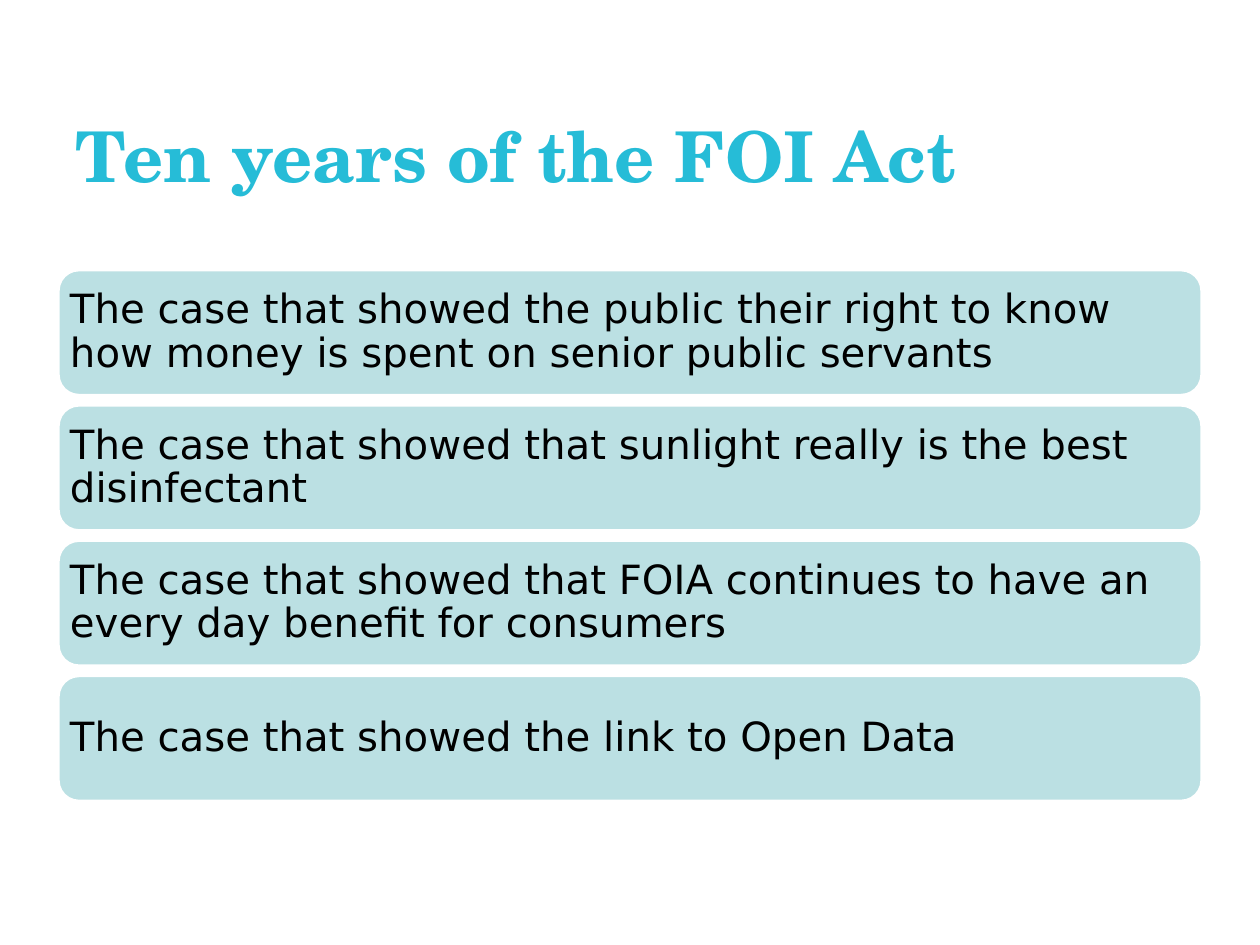
from pptx import Presentation
from pptx.dml.color import RGBColor
from pptx.enum.shapes import MSO_SHAPE as Shape
from pptx.enum.text import MSO_ANCHOR as Anchor, MSO_AUTO_SIZE as AutoSize, PP_ALIGN as Align
from pptx.util import Pt

TITLE_BLUE = RGBColor(0x26, 0xBC, 0xD7)
PANEL_TEAL = RGBColor(0xBB, 0xE0, 0xE3)
WHITE = RGBColor(0xFF, 0xFF, 0xFF)
BLACK = RGBColor(0x00, 0x00, 0x00)

TITLE_FONT = {"name": "TeX Gyre Schola", "size": Pt(40), "bold": True}
CASE_FONT = {"name": "DejaVu Sans", "size": Pt(23), "bold": False}
TITLE_FRAME = {"word_wrap": True, "auto_size": AutoSize.NONE, "vertical_anchor": Anchor.TOP}
CASE_FRAME = {
    "word_wrap": True,
    "vertical_anchor": Anchor.MIDDLE,
    "margin_left": Pt(3.4),
    "margin_right": Pt(3.4),
    "margin_top": Pt(3.4),
    "margin_bottom": Pt(3.4),
}
PARAGRAPH = {"alignment": Align.LEFT, "line_spacing": 0.9}

CASES = [
    "The case that showed the public their right to know how money is spent on senior public servants",
    "The case that showed that sunlight really is the best disinfectant",
    "The case that showed that FOIA continues to have an every day benefit for consumers",
    "The case that showed the link to Open Data",
]
PANEL_LEFT, PANEL_TOP = 33.1, 154.1
PANEL_WIDTH, PANEL_HEIGHT = 653.8, 72
PANEL_PITCH = 77.3


def apply_format(target, values):
    for name, value in values.items():
        setattr(target, name, value)


def write_text(shape, text, frame_format, font_format, color):
    frame = shape.text_frame
    apply_format(frame, frame_format)
    frame.text = text
    paragraph = frame.paragraphs[0]
    apply_format(paragraph, PARAGRAPH)
    apply_format(paragraph.font, font_format)
    paragraph.font.color.rgb = color


def add_title(slide, text):
    title = slide.shapes.title
    apply_format(title, {"left": Pt(36), "top": Pt(66.2), "width": Pt(653.8), "height": Pt(84.2)})
    write_text(title, text, TITLE_FRAME, TITLE_FONT, TITLE_BLUE)


def add_case_panel(slide, top, text):
    panel = slide.shapes.add_shape(
        Shape.ROUNDED_RECTANGLE, Pt(PANEL_LEFT), Pt(top), Pt(PANEL_WIDTH), Pt(PANEL_HEIGHT)
    )
    panel.shadow.inherit = False
    panel.fill.solid()
    panel.fill.fore_color.rgb = PANEL_TEAL
    panel.line.color.rgb = WHITE
    panel.line.width = Pt(2)
    write_text(panel, text, CASE_FRAME, CASE_FONT, BLACK)


def main():
    presentation = Presentation()
    apply_format(presentation, {"slide_width": Pt(720), "slide_height": Pt(540)})
    slide = presentation.slides.add_slide(presentation.slide_layouts[5])
    add_title(slide, "Ten years of the FOI Act")
    for index, text in enumerate(CASES):
        add_case_panel(slide, PANEL_TOP + index * PANEL_PITCH, text)
    presentation.save("out.pptx")


if __name__ == "__main__":
    main()
